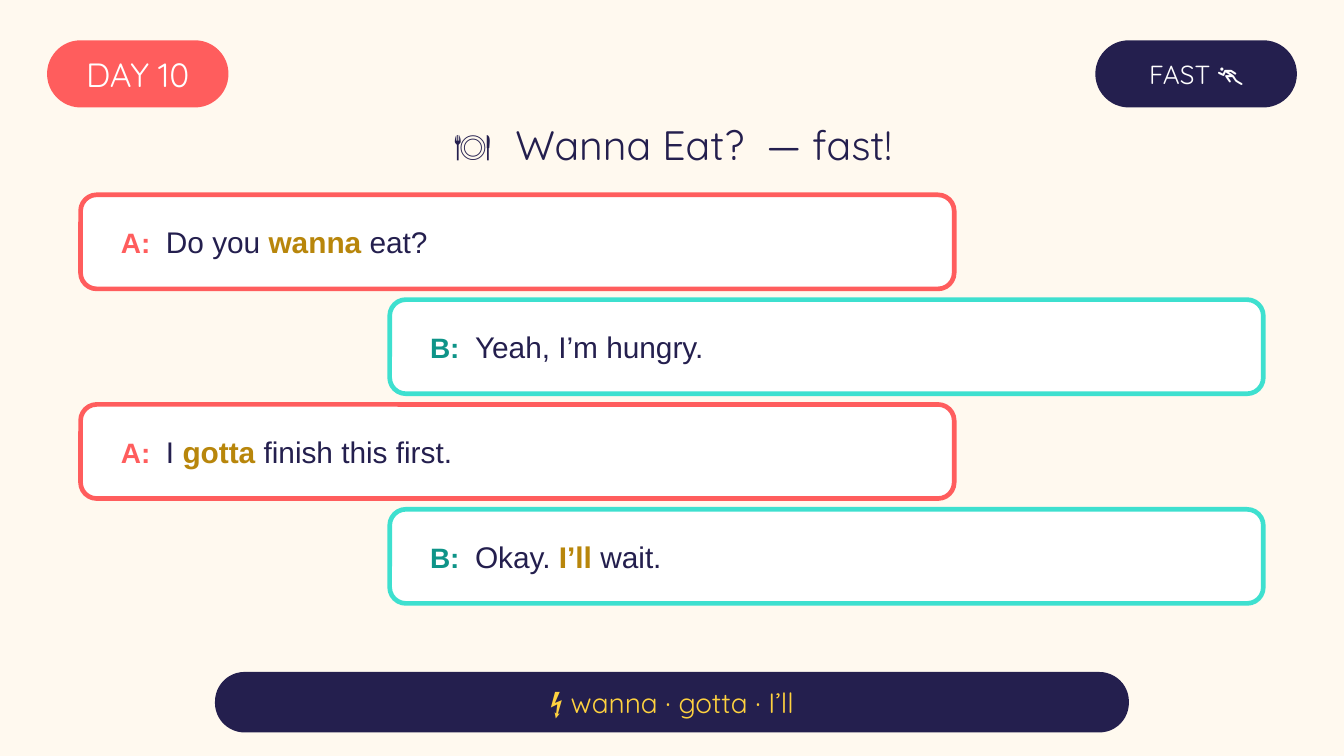
from pptx import Presentation
from pptx.dml.color import RGBColor
from pptx.enum.shapes import MSO_SHAPE as Shape
from pptx.enum.text import MSO_ANCHOR as Anchor, MSO_AUTO_SIZE as AutoSize, PP_ALIGN as Align
from pptx.util import Emu, Pt

PX = 4572  # 200 px to the inch
TITLE_ONLY = 5


def px(length):
    return Emu(length * PX)


def rgb(hex_code):
    return RGBColor.from_string(hex_code)


class DialogueSlide:
    HEADING_FONT, SPEECH_FONT = "Quicksand", "Arial"
    CREAM, WHITE, NAVY = "FFF9EF", "FFFFFF", "241F4E"
    CORAL, TURQUOISE, TEAL = "FF5D5D", "3EE0CF", "0E9488"
    GOLD, YELLOW = "B8860B", "FFD23F"

    def __init__(self, deck):
        self.slide = deck.slides.add_slide(deck.slide_layouts[TITLE_ONLY])
        background = self.slide.background.fill
        background.solid()
        background.fore_color.rgb = rgb(self.CREAM)

    def style(self, font, name, size, color, bold=False):
        font.name, font.size, font.bold = name, Pt(size), bold
        font.color.rgb = rgb(color)

    def title(self, text, left, top, width, height):
        heading = self.slide.shapes.title
        heading.left, heading.top = px(left), px(top)
        heading.width, heading.height = px(width), px(height)
        frame = heading.text_frame
        frame.text = text
        frame.auto_size = AutoSize.NONE
        frame.vertical_anchor = Anchor.MIDDLE
        paragraph = frame.paragraphs[0]
        paragraph.alignment = Align.CENTER
        self.style(paragraph.font, self.HEADING_FONT, 22, self.NAVY)

    def rounded(self, left, top, width, height, radius, fill, inset=0):
        """Add a borderless rounded box and return it with its first paragraph."""
        box = self.slide.shapes.add_shape(
            Shape.ROUNDED_RECTANGLE, px(left), px(top), px(width), px(height))
        box.adjustments[0] = radius / height
        box.shadow.inherit = False
        box.fill.solid()
        box.fill.fore_color.rgb = rgb(fill)
        box.line.fill.background()
        frame = box.text_frame
        frame.word_wrap = True
        frame.vertical_anchor = Anchor.MIDDLE
        frame.margin_left = frame.margin_right = px(inset)
        frame.margin_top = frame.margin_bottom = 0
        return box, frame.paragraphs[0]

    def pill(self, text, left, top, width, height, radius, fill, size, color):
        _, label = self.rounded(left, top, width, height, radius, fill)
        label.text = text
        label.alignment = Align.CENTER
        self.style(label.font, self.HEADING_FONT, size, color)

    def bubble(self, speaker, speech, left, top, border, speaker_color):
        """Add one line of dialogue; words between asterisks are highlighted."""
        card, line = self.rounded(left, top, 1300, 140, 24, self.WHITE, inset=53)
        card.line.color.rgb = rgb(border)
        card.line.width = Pt(2.5)
        line.alignment = Align.LEFT
        name = line.add_run()
        name.text = f"{speaker}:  "
        self.style(name.font, self.SPEECH_FONT, 15, speaker_color, bold=True)
        for index, part in enumerate(speech.split("*")):
            highlighted = index % 2 == 1
            words = line.add_run()
            words.text = part
            self.style(words.font, self.SPEECH_FONT, 16,
                       self.GOLD if highlighted else self.NAVY, highlighted)


def main():
    deck = Presentation()
    deck.slide_width, deck.slide_height = px(2000), px(1125)
    page = DialogueSlide(deck)

    page.pill("DAY 10", 70, 60, 270, 100, 50, page.CORAL, 18, page.WHITE)
    page.pill("FAST 🏃", 1630, 60, 300, 100, 50, page.NAVY, 14, page.WHITE)
    page.title("🍽️  Wanna Eat?  — fast!", 0, 164, 2000, 100)

    speakers = {
        "A": (120, page.CORAL, page.CORAL),
        "B": (580, page.TURQUOISE, page.TEAL),
    }
    dialogue = [
        ("A", "Do you *wanna* eat?"),
        ("B", "Yeah, I’m hungry."),
        ("A", "I *gotta* finish this first."),
        ("B", "Okay. *I’ll* wait."),
    ]
    for row, (speaker, speech) in enumerate(dialogue):
        left, border, speaker_color = speakers[speaker]
        page.bubble(speaker, speech, left, 290 + 156 * row, border, speaker_color)

    page.pill("⚡ wanna · gotta · I’ll", 320, 1000, 1360, 90, 44,
              page.NAVY, 15, page.YELLOW)
    deck.save("out.pptx")


if __name__ == "__main__":
    main()
